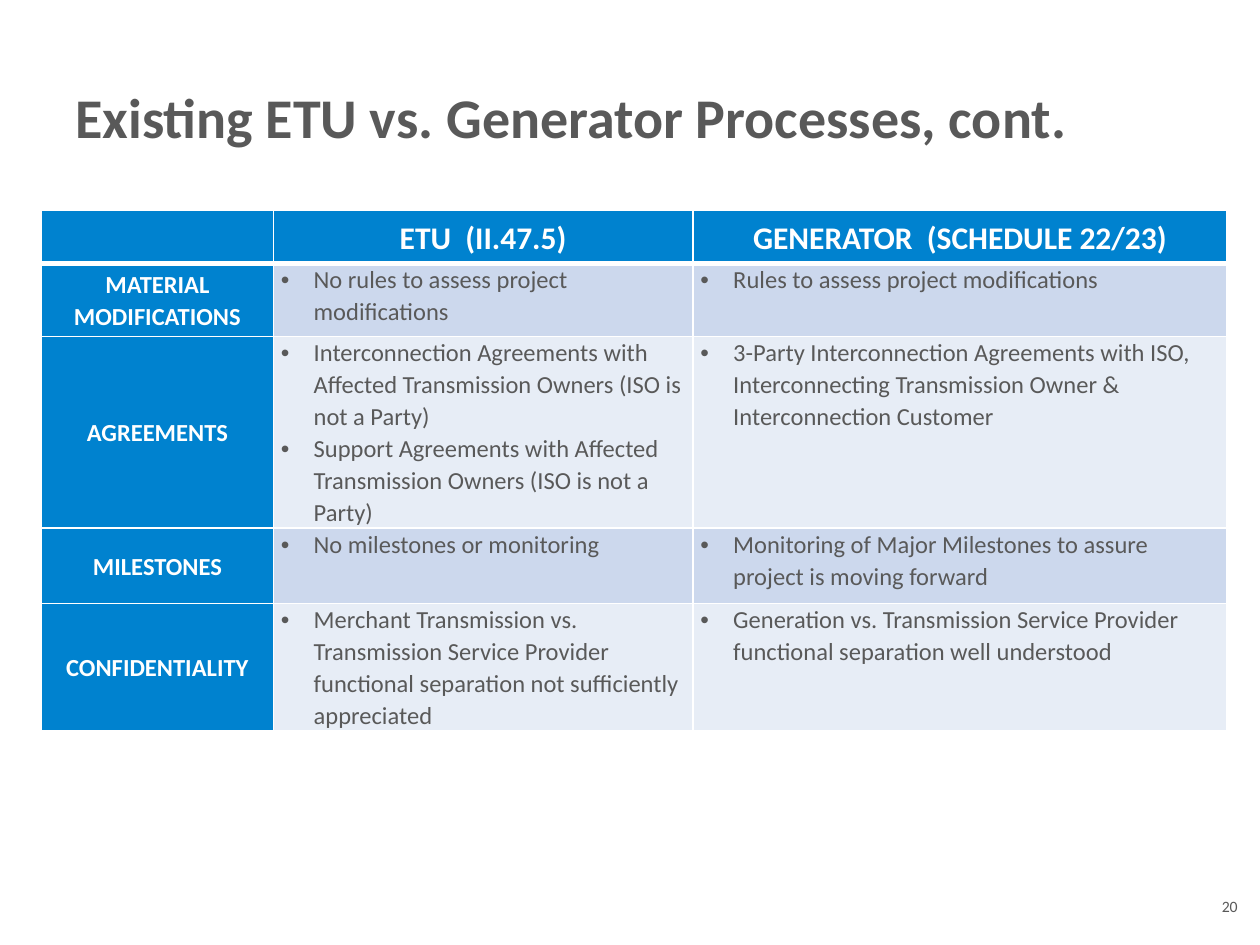
"""Build the slide comparing existing ETU and generator processes."""
from lxml import etree
from pptx import Presentation
from pptx.dml.color import RGBColor
from pptx.enum.text import MSO_ANCHOR as Anchor, PP_ALIGN as Align
from pptx.oxml.ns import qn
from pptx.util import Inches, Pt

BLUE, WHITE, GRAY = "0082CF", "FFFFFF", "595959"
BANDS = ["CCD8ED", "E7EDF6"]
COLUMN_WIDTHS = [1.84, 3.33, 4.24]
ROW_HEIGHTS = [0.42, 0.58, 1.52, 0.6, 1.01]
ROWS = [
    [[""], ["ETU  (II.47.5)"], ["GENERATOR  (SCHEDULE 22/23)"]],
    [["MATERIAL MODIFICATIONS"],
     ["No rules to assess project modifications"],
     ["Rules to assess project modifications"]],
    [["AGREEMENTS"],
     ["Interconnection Agreements with Affected Transmission Owners (ISO is not a Party)",
      "Support Agreements with Affected Transmission Owners (ISO is not a Party)"],
     ["3-Party Interconnection Agreements with ISO, Interconnecting Transmission Owner "
      "& Interconnection Customer"]],
    [["MILESTONES"],
     ["No milestones or monitoring"],
     ["Monitoring of Major Milestones to assure project is moving forward"]],
    [["CONFIDENTIALITY"],
     ["Merchant Transmission vs. Transmission Service Provider functional separation "
      "not sufficiently appreciated"],
     ["Generation vs. Transmission Service Provider functional separation well understood"]],
]


def color(value):
    return RGBColor.from_string(value)


def write_text(frame, lines, size=14, ink=GRAY, bold=False, align=Align.LEFT,
               spacing=1.0, bullet=False):
    frame.word_wrap = True
    frame.text = "\n".join(lines)
    for paragraph in frame.paragraphs:
        paragraph.alignment = align
        paragraph.line_spacing = spacing
        if bullet:
            properties = paragraph._p.get_or_add_pPr()
            properties.set("marL", str(Inches(0.26)))
            properties.set("indent", str(-Inches(0.26)))
            etree.SubElement(properties, qn("a:buFont"), typeface="Arial")
            etree.SubElement(properties, qn("a:buChar"), char="•")
        font = paragraph.font
        for target in [font] + [run.font for run in paragraph.runs]:
            target.name = "Calibri"
            target.size = Pt(size)
            target.bold = bold
            target.color.rgb = color(ink)


presentation = Presentation()
presentation.slide_width = Inches(10)
presentation.slide_height = Inches(7.5)
slide = presentation.slides.add_slide(presentation.slide_layouts[6])

title = slide.shapes.add_textbox(Inches(0.5), Inches(0.3), Inches(9), Inches(1.25))
title.text_frame.vertical_anchor = Anchor.MIDDLE
write_text(title.text_frame, ["Existing ETU vs. Generator Processes, cont."], size=32, bold=True)

page_number = slide.shapes.add_textbox(Inches(9.59), Inches(7.05), Inches(0.34), Inches(0.29))
frame = page_number.text_frame
frame.margin_left = frame.margin_right = frame.margin_top = frame.margin_bottom = 0
frame.vertical_anchor = Anchor.MIDDLE
write_text(frame, ["20"], size=9, align=Align.CENTER)

table = slide.shapes.add_table(
    len(ROWS), len(COLUMN_WIDTHS), Inches(0.33), Inches(1.67),
    Inches(sum(COLUMN_WIDTHS)), Inches(sum(ROW_HEIGHTS))).table
for column, width in zip(table.columns, COLUMN_WIDTHS):
    column.width = Inches(width)
for row, height in zip(table.rows, ROW_HEIGHTS):
    row.height = Inches(height)

for row_index, row in enumerate(ROWS):
    for column_index, lines in enumerate(row):
        cell = table.cell(row_index, column_index)
        is_header = row_index == 0
        is_heading = is_header or column_index == 0
        cell.margin_left = cell.margin_right = Inches(0.06)
        cell.margin_top = cell.margin_bottom = 0
        cell.vertical_anchor = Anchor.MIDDLE if is_heading else Anchor.TOP

        for side in "LRTB":
            thick = (row_index, side) in [(0, "B"), (1, "T")]
            border = etree.SubElement(cell._tc.get_or_add_tcPr(), qn(f"a:ln{side}"),
                                      w=str(Pt(3 if thick else 1)))
            line_fill = etree.SubElement(border, qn("a:solidFill"))
            etree.SubElement(line_fill, qn("a:srgbClr"), val=WHITE)

        cell.fill.solid()
        cell.fill.fore_color.rgb = color(BLUE if is_heading else BANDS[(row_index - 1) % 2])
        write_text(cell.text_frame, lines, size=18 if is_header else 14,
                   ink=WHITE if is_heading else GRAY, bold=is_heading,
                   align=Align.CENTER if is_heading else Align.LEFT,
                   spacing=1.07, bullet=not is_heading)

presentation.save("out.pptx")
